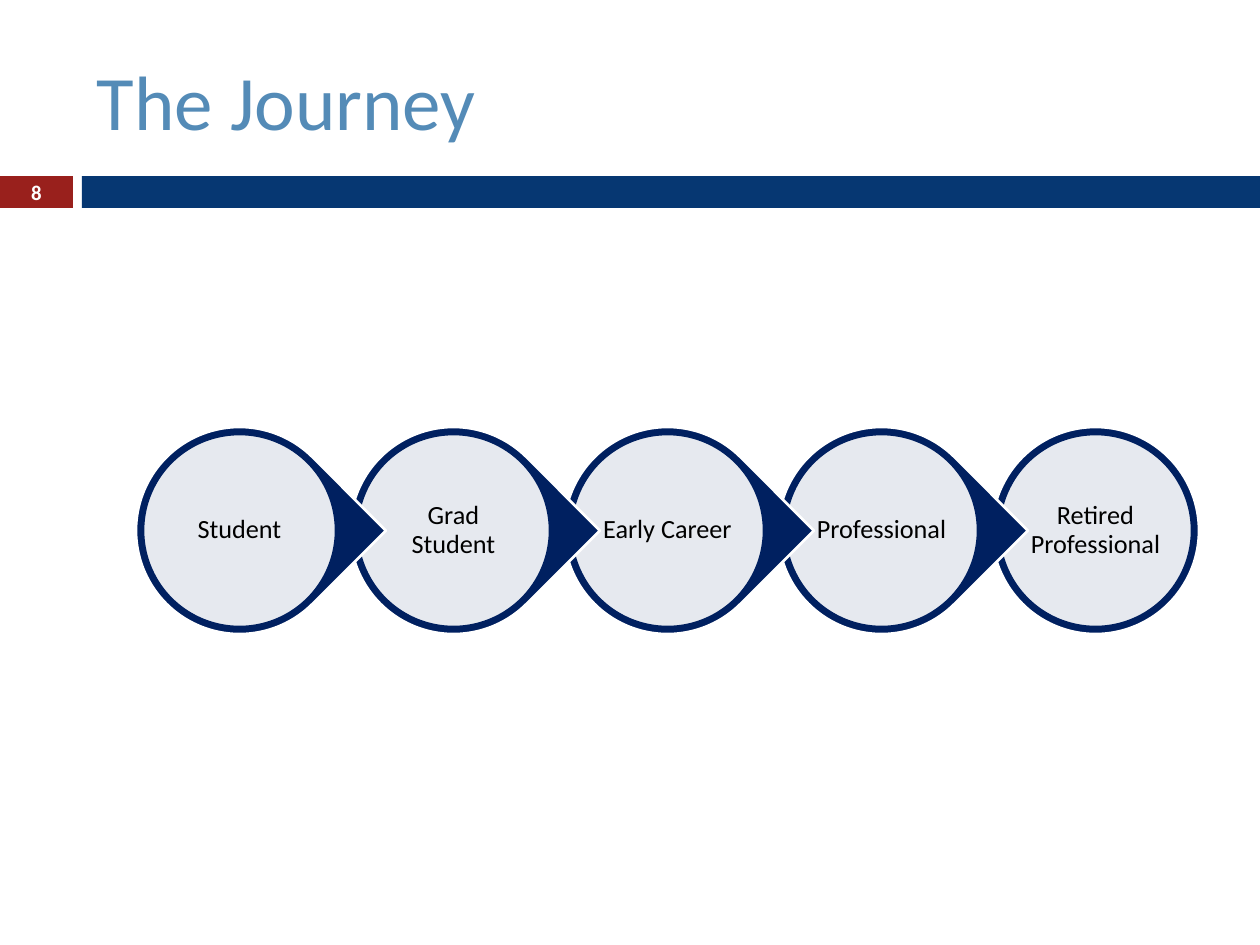
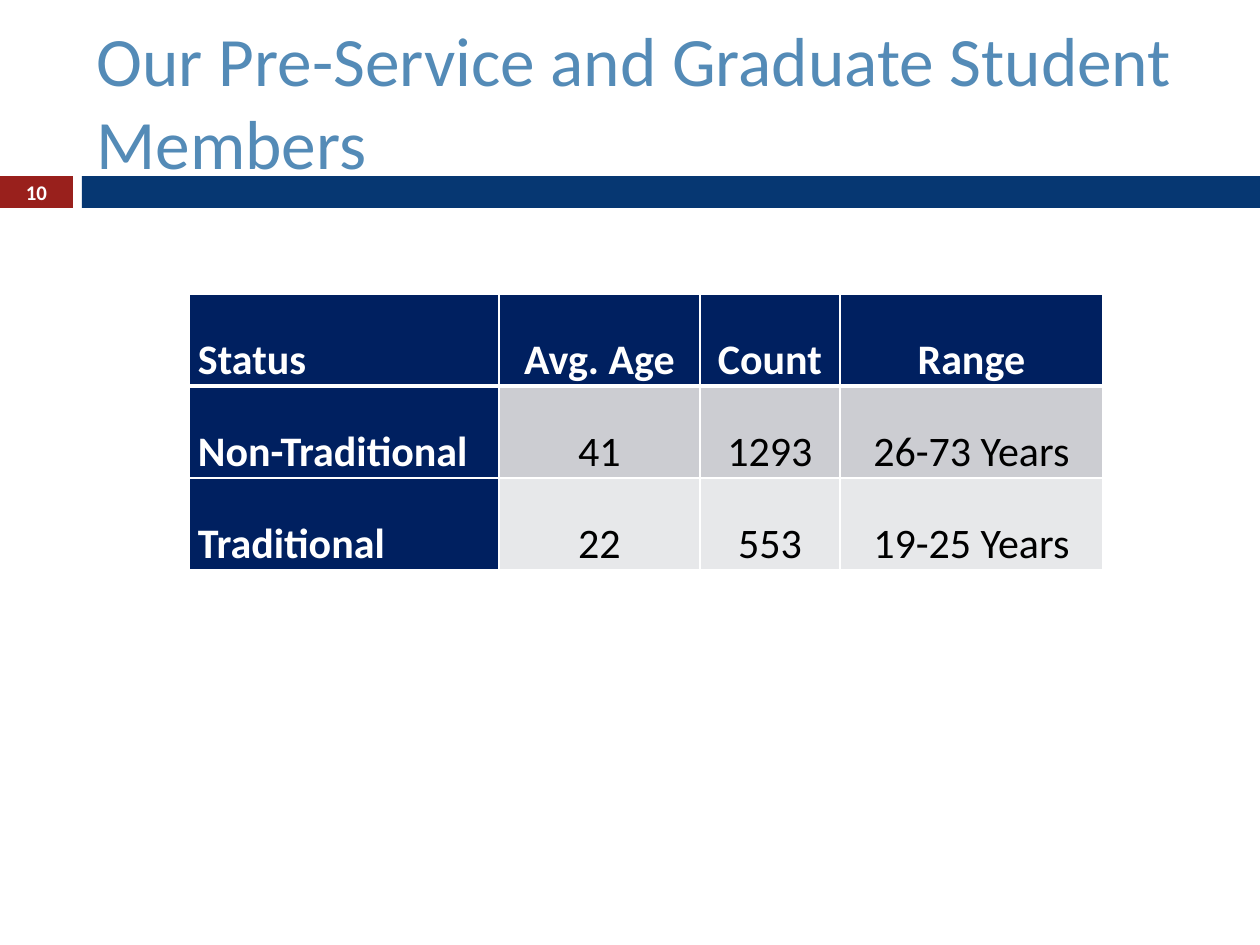
from lxml.etree import SubElement
from pptx import Presentation
from pptx.dml.color import RGBColor
from pptx.enum.shapes import MSO_SHAPE
from pptx.enum.text import MSO_ANCHOR, MSO_AUTO_SIZE, PP_ALIGN
from pptx.oxml.ns import qn
from pptx.util import Emu, Pt

FONT = "Calibri"
WHITE = RGBColor(0xFF, 0xFF, 0xFF)
BLACK = RGBColor(0x00, 0x00, 0x00)
NAVY = RGBColor(0x00, 0x20, 0x60)
BAND_BLUE = RGBColor(0x06, 0x37, 0x72)
BAND_RED = RGBColor(0x99, 0x20, 0x1C)
TITLE_BLUE = RGBColor(0x54, 0x8B, 0xB7)
ROW_FILLS = (RGBColor(0xCC, 0xCD, 0xD2), RGBColor(0xE7, 0xE8, 0xEA))

STAGES = ("Student", "Grad Student", "Early Career", "Professional", "Retired Professional")
MEMBERS = (
    ("Status", "Avg. Age", "Count", "Range"),
    ("Non-Traditional", "41", "1293", "26-73 Years"),
    ("Traditional", "22", "553", "19-25 Years"),
)


def px(length):
    """Turn px at 126 to the inch into EMU."""
    return Emu(round(length * 914400 / 126))


def write(paragraph, text, size, color, bold=False, align=PP_ALIGN.CENTER):
    """Add one formatted run to a paragraph."""
    paragraph.alignment = align
    run = paragraph.add_run()
    run.text = text
    run.font.name = FONT
    run.font.size = Pt(size)
    run.font.bold = bold
    run.font.color.rgb = color


def add_label(slide, box, text, size, color, bold=False, inset=0):
    """Add a centred, wrapping text box and return its paragraph."""
    frame = slide.shapes.add_textbox(*map(px, box)).text_frame
    frame.word_wrap = True
    frame.vertical_anchor = MSO_ANCHOR.MIDDLE
    frame.margin_left = frame.margin_right = px(inset)
    frame.margin_top = frame.margin_bottom = px(inset)
    write(frame.paragraphs[0], text, size, color, bold)
    return frame.paragraphs[0]


def add_filled(slide, preset, box, fill, line=None):
    """Add a flat preset shape with an optional outline."""
    shape = slide.shapes.add_shape(preset, *map(px, box))
    shape.shadow.inherit = False
    shape.fill.solid()
    shape.fill.fore_color.rgb = fill
    if line is None:
        shape.line.fill.background()
    else:
        shape.line.color.rgb = line
        shape.line.width = Pt(1.5)
    return shape


def add_framed_slide(deck, heading, heading_size, number):
    """Add a slide with its title, the two bands and the slide number."""
    slide = deck.slides.add_slide(deck.slide_layouts[5])
    title = slide.shapes.title
    title.left, title.top, title.width, title.height = map(px, (84, 32, 1124, 136))
    title.text_frame.auto_size = MSO_AUTO_SIZE.NONE
    title.text_frame.vertical_anchor = MSO_ANCHOR.MIDDLE
    write(title.text_frame.paragraphs[0], heading, heading_size, TITLE_BLUE,
          align=PP_ALIGN.LEFT)
    add_filled(slide, MSO_SHAPE.RECTANGLE, (0, 176, 73, 32), BAND_RED)
    add_filled(slide, MSO_SHAPE.RECTANGLE, (82, 176, 1178, 32), BAND_BLUE)
    add_label(slide, (0, 175, 73, 34), number, 11.9, WHITE, bold=True)
    return slide


def add_stage(slide, box, stage, is_last):
    """Draw one stage: a pointed drop or final disc, its pale face and its name."""
    left, top, size = box

    def inner(inset):
        """Give the square that lies inset inside the stage."""
        return left + inset, top + inset, size - 2 * inset, size - 2 * inset

    preset = MSO_SHAPE.OVAL if is_last else MSO_SHAPE.TEAR
    backing = add_filled(slide, preset, inner(0), NAVY, WHITE)
    if not is_last:
        backing.rotation = 45
    face = add_filled(slide, MSO_SHAPE.OVAL, inner(7), WHITE, NAVY)
    face_color = face.fill._xPr.find(qn("a:solidFill"))[0]
    SubElement(face_color, qn("a:alpha"), val="90000")
    name = add_label(slide, inner(35), stage, 15, BLACK, inset=2)
    name.line_spacing = 0.9


def add_journey(slide, box, stages):
    """Spread the stages evenly over the box, each pointing over the next."""
    left, top, width, size = box
    last = len(stages) - 1
    pitch = (width - size) / last
    for index in range(last, -1, -1):
        add_stage(slide, (left + index * pitch, top, size), stages[index], index == last)


def add_borders(cell, top, bottom):
    """Give a cell white borders with the top and bottom widths in points."""
    properties = cell._tc.get_or_add_tcPr()
    for side, width in (("L", 1), ("R", 1), ("T", top), ("B", bottom)):
        border = SubElement(properties, qn(f"a:ln{side}"), w=str(Pt(width)))
        fill = SubElement(border, qn("a:solidFill"))
        SubElement(fill, qn("a:srgbClr"), val=str(WHITE))


def add_member_table(slide, box, widths, rows):
    """Add the member table with a navy header row and first column."""
    table = slide.shapes.add_table(len(rows), len(widths), *map(px, box)).table
    for column, width in zip(table.columns, widths):
        column.width = px(width)
    for r, row in enumerate(rows):
        table.rows[r].height = px(box[3] / len(rows))
        for c, value in enumerate(row):
            cell = table.cell(r, c)
            is_heading = r == 0 or c == 0
            add_borders(cell, 3 if r == 1 else 1, 3 if r == 0 else 1)
            cell.fill.solid()
            cell.fill.fore_color.rgb = NAVY if is_heading else ROW_FILLS[r - 1]
            cell.vertical_anchor = MSO_ANCHOR.BOTTOM
            cell.margin_left = cell.margin_right = px(9)
            cell.margin_top = cell.margin_bottom = 0
            write(cell.text_frame.paragraphs[0], value, 24,
                  WHITE if is_heading else BLACK, is_heading,
                  PP_ALIGN.CENTER if c else PP_ALIGN.LEFT)


def main():
    """Build both slides and save the deck."""
    deck = Presentation()
    deck.slide_width, deck.slide_height = px(1260), px(945)
    journey = add_framed_slide(deck, "The Journey", 44, "8")
    add_journey(journey, (136, 427, 1063, 207), STAGES)
    members = add_framed_slide(
        deck, "Our Pre-Service and Graduate Student Members", 39.6, "10")
    add_member_table(members, (189, 294, 914, 276), (310, 201, 140, 263), MEMBERS)
    deck.save("out.pptx")


if __name__ == "__main__":
    main()
